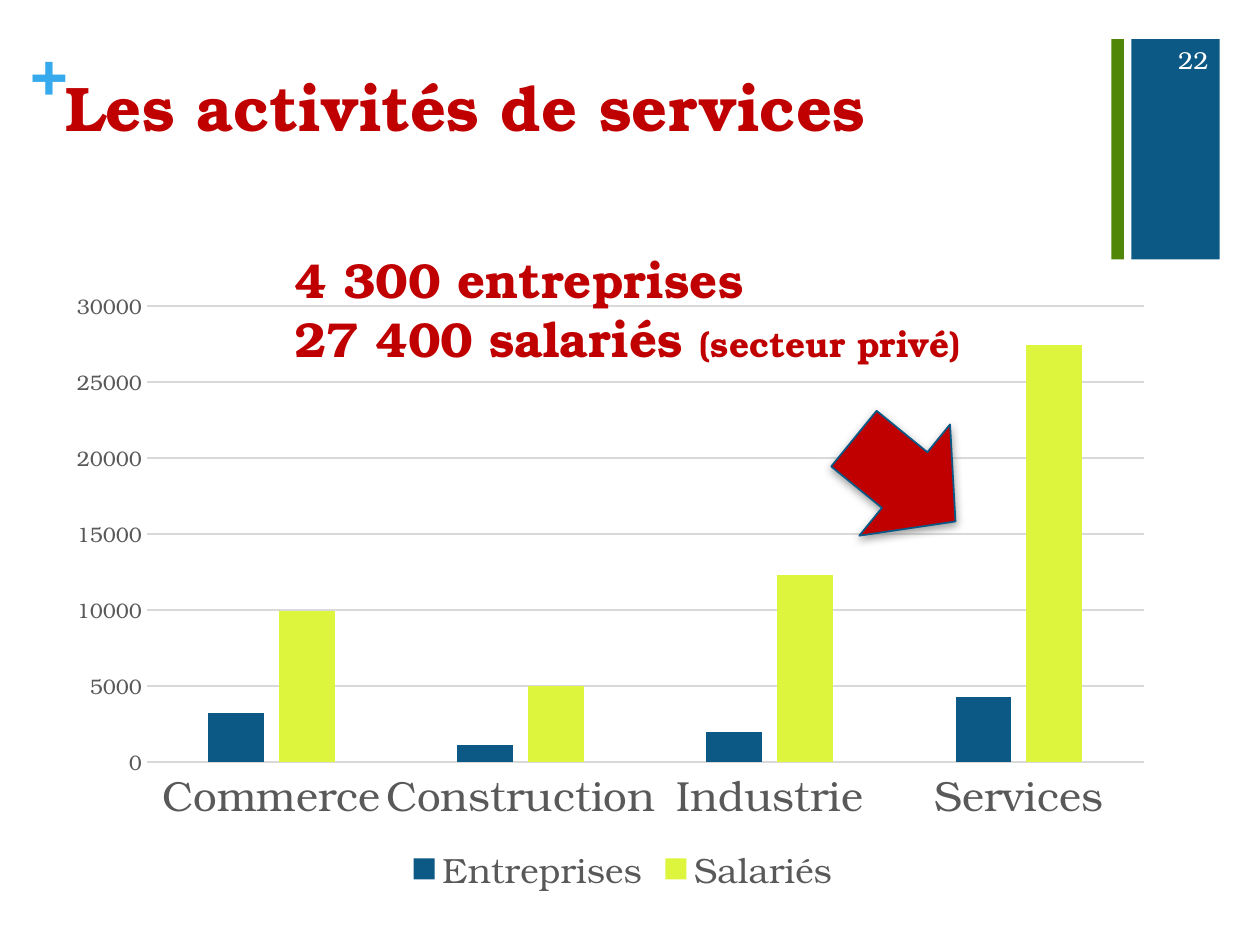
from pptx import Presentation
from pptx.chart.data import CategoryChartData
from pptx.dml.color import RGBColor
from pptx.enum.chart import XL_CHART_TYPE as Chart, XL_LEGEND_POSITION as Legend
from pptx.enum.chart import XL_TICK_MARK as Tick
from pptx.enum.shapes import MSO_SHAPE as Shape
from pptx.enum.text import MSO_ANCHOR as Anchor, PP_ALIGN as Align
from pptx.oxml import parse_xml
from pptx.oxml.ns import nsdecls
from pptx.util import Inches, Pt

FONT = "TeX Gyre Bonum"
RED, BLUE, GREEN, LIME = "C00000", "0C5986", "508709", "DDF53D"
SKY, GREY, RULE, WHITE = "37AAED", "595959", "D9D9D9", "FFFFFF"


def color(code):
    return RGBColor.from_string(code)


def place(box):
    return [Inches(v) for v in box]


class Deck:
    def __init__(self):
        self.prs = Presentation()
        self.prs.slide_width, self.prs.slide_height = Inches(10), Inches(7.5)
        self.slide = self.prs.slides.add_slide(self.prs.slide_layouts[5])

    def style(self, font, size, code, bold=False):
        font.name, font.size, font.bold = FONT, Pt(size), bold
        font.color.rgb = color(code)

    def fill_in(self, frame, text, size, code, bold=False, align=Align.LEFT,
                anchor=Anchor.TOP):
        frame.text = text
        frame.word_wrap = True
        frame.vertical_anchor = anchor
        for para in frame.paragraphs:
            para.alignment = align
            for run in para.runs:
                self.style(run.font, size, code, bold)

    def title(self, box, text):
        title = self.slide.shapes.title
        title.left, title.top, title.width, title.height = place(box)
        self.fill_in(title.text_frame, text, 36, RED, True)

    def text(self, box, *args, inset=True, **kwargs):
        frame = self.slide.shapes.add_textbox(*place(box)).text_frame
        if not inset:
            frame.margin_left = frame.margin_right = 0
            frame.margin_top = frame.margin_bottom = 0
        self.fill_in(frame, *args, **kwargs)
        return frame

    def shape(self, kind, box, fill, line=None):
        shape = self.slide.shapes.add_shape(kind, *place(box))
        shape.shadow.inherit = False
        shape.fill.solid()
        shape.fill.fore_color.rgb = color(fill)
        if line:
            shape.line.color.rgb = color(line)
            shape.line.width = Pt(1)
        else:
            shape.line.fill.background()
        return shape

    def shade(self, shape):
        """Give the shape a soft grey shadow straight below it."""
        effects = shape._element.spPr.find(
            "{http://schemas.openxmlformats.org/drawingml/2006/main}effectLst")
        effects.append(parse_xml(
            f'<a:outerShdw {nsdecls("a")} blurRad="{Pt(5)}" dist="{Pt(2)}" '
            'dir="5400000" rotWithShape="0"><a:srgbClr val="808080">'
            '<a:alpha val="75000"/></a:srgbClr></a:outerShdw>'))

    def rule(self, line):
        line.color.rgb = color(RULE)
        line.width = Pt(0.75)

    def columns(self, box, cats, series, plot_box):
        """Draw clustered columns; series maps a name to (values, colour)."""
        data = CategoryChartData()
        data.categories = cats
        for name, (vals, _) in series.items():
            data.add_series(name, vals)
        chart = self.slide.shapes.add_chart(
            Chart.COLUMN_CLUSTERED, *place(box), data).chart
        self.style(chart.font, 10, "000000")
        chart.has_title = False

        chart.has_legend = True
        chart.legend.position = Legend.BOTTOM
        chart.legend.include_in_layout = False
        self.style(chart.legend.font, 20, GREY)

        plot = chart.plots[0]
        plot.gap_width, plot.overlap = 219, -27
        plot.vary_by_categories = False
        for item, (_, code) in zip(plot.series, series.values()):
            item.format.fill.solid()
            item.format.fill.fore_color.rgb = color(code)

        cat, val = chart.category_axis, chart.value_axis
        for axis, size in ((cat, 24), (val, 12)):
            axis.major_tick_mark = axis.minor_tick_mark = Tick.NONE
            self.style(axis.tick_labels.font, size, GREY)
        self.rule(cat.format.line)
        val.format.line.fill.background()
        val.minimum_scale, val.maximum_scale, val.major_unit = 0, 30000, 5000
        self.rule(val.major_gridlines.format.line)
        self.fix(chart, plot_box)

    def fix(self, chart, box):
        """Pin the inner plot area to fractions of the chart."""
        area = chart._chartSpace.chart.plotArea
        for old in area.findall(
                "{http://schemas.openxmlformats.org/drawingml/2006/chart}layout"):
            area.remove(old)
        sizes = "".join(f'<c:{tag} val="{v}"/>' for tag, v in zip("xywh", box))
        area.insert(0, parse_xml(
            f'<c:layout {nsdecls("c")}><c:manualLayout>'
            '<c:layoutTarget val="inner"/><c:xMode val="edge"/>'
            f'<c:yMode val="edge"/>{sizes}</c:manualLayout></c:layout>'))


def main():
    deck = Deck()
    deck.shape(Shape.RECTANGLE, (8.98, 0.31, 0.7, 1.75), BLUE)
    deck.text((0.24, 0.25, 0.28, 0.61), "+", 36, SKY, True, inset=False)
    deck.shape(Shape.RECTANGLE, (8.82, 0.31, 0.1, 1.75), GREEN)
    deck.title((0.42, 0.49, 8.69, 1.22), "Les activités de services")
    deck.text((9.08, 0.27, 0.61, 0.4), "22", 14, WHITE,
              align=Align.RIGHT, anchor=Anchor.MIDDLE)

    deck.columns(
        (0.55, 2.18, 8.79, 4.96),
        ["Commerce", "Construction", "Industrie", "Services"],
        {"Entreprises": ((3200, 1100, 2000, 4300), BLUE),
         "Salariés": ((9900, 5000, 12300, 27400), LIME)},
        (0.07, 0.05, 0.9, 0.73))

    arrow = deck.shape(Shape.RIGHT_ARROW, (6.66, 3.24, 1.04, 1.14), RED, "095886")
    arrow.rotation = 39.2
    deck.shade(arrow)

    facts = deck.text((2.24, 1.93, 6.34, 1.04),
                      "4 300 entreprises\n27 400 salariés ", 28, RED, True)
    note = facts.paragraphs[1].add_run()
    note.text = "(secteur privé)"
    deck.style(note.font, 20, RED, True)

    deck.prs.save("out.pptx")


if __name__ == "__main__":
    main()
